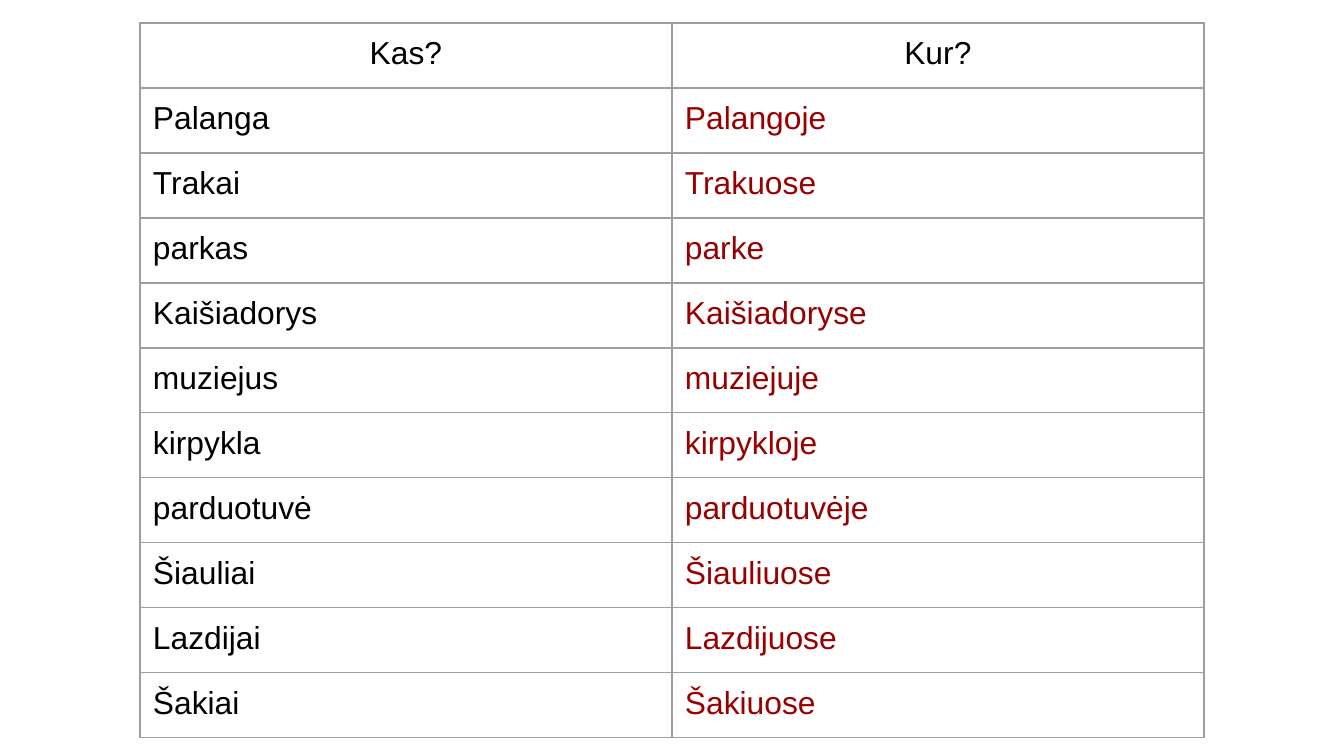
from lxml import etree
from pptx import Presentation
from pptx.dml.color import RGBColor
from pptx.enum import text
from pptx.oxml import ns
from pptx.util import Pt

PX = 6804
COLORS = {"nominative": "000000", "locative": "980000", "border": "9E9E9E"}
LEFT, TOP, COLUMN_WIDTH, ROW_HEIGHT = 140, 23, 532, 65
MARGINS = {
    "margin_left": 13,
    "margin_right": 13,
    "margin_top": 13,
    "margin_bottom": 13,
}
FONT = {"name": "Arial", "size": Pt(17), "bold": False}
ROWS = [
    ("Kas?", "Kur?"),
    ("Palanga", "Palangoje"),
    ("Trakai", "Trakuose"),
    ("parkas", "parke"),
    ("Kaišiadorys", "Kaišiadoryse"),
    ("muziejus", "muziejuje"),
    ("kirpykla", "kirpykloje"),
    ("parduotuvė", "parduotuvėje"),
    ("Šiauliai", "Šiauliuose"),
    ("Lazdijai", "Lazdijuose"),
    ("Šakiai", "Šakiuose"),
]


def add_borders(cell):
    properties = cell._tc.get_or_add_tcPr()
    for side in ("lnL", "lnR", "lnT", "lnB"):
        line = etree.SubElement(properties, ns.qn(f"a:{side}"), w=str(Pt(0.75)))
        fill = etree.SubElement(line, ns.qn("a:solidFill"))
        etree.SubElement(fill, ns.qn("a:srgbClr"), val=COLORS["border"])


deck = Presentation()
deck.slide_width, deck.slide_height = 1344 * PX, 756 * PX
page = deck.slides.add_slide(deck.slide_layouts[6])

frame = page.shapes.add_table(
    len(ROWS), 2, LEFT * PX, TOP * PX,
    2 * COLUMN_WIDTH * PX, len(ROWS) * ROW_HEIGHT * PX,
)
table = frame.table
table.first_row = False
table.horz_banding = False
for column in table.columns:
    column.width = COLUMN_WIDTH * PX

for row_index, words in enumerate(ROWS):
    table.rows[row_index].height = ROW_HEIGHT * PX
    for column_index, word in enumerate(words):
        cell = table.cell(row_index, column_index)
        add_borders(cell)
        cell.fill.background()
        for name, value in MARGINS.items():
            setattr(cell, name, value * PX)
        para = cell.text_frame.paragraphs[0]
        is_header = row_index == 0
        para.alignment = text.PP_ALIGN.CENTER if is_header else text.PP_ALIGN.LEFT
        span = para.add_run()
        span.text = word
        for name, value in FONT.items():
            setattr(span.font, name, value)
        role = "locative" if column_index == 1 and not is_header else "nominative"
        span.font.color.rgb = RGBColor.from_string(COLORS[role])

deck.save("out.pptx")
